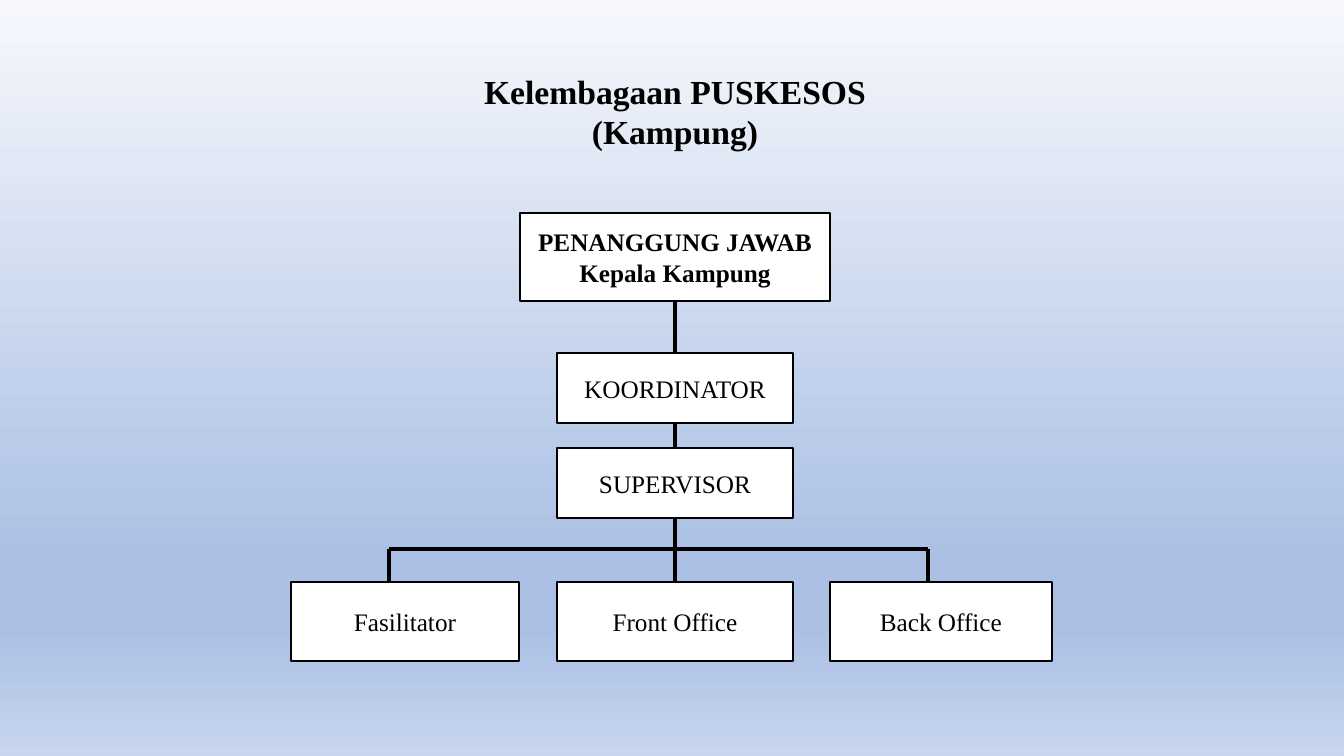
from lxml.etree import SubElement
from pptx import Presentation
from pptx.dml.color import RGBColor
from pptx.enum.shapes import MSO_CONNECTOR as LINE, MSO_SHAPE as SHAPE
from pptx.enum.text import MSO_ANCHOR as ANCHOR, PP_ALIGN as ALIGN
from pptx.oxml.ns import qn
from pptx.util import Pt

PX = 914400 / 100.8
FONT = "Times New Roman"
BLACK = RGBColor(0x00, 0x00, 0x00)
WHITE = RGBColor(0xFF, 0xFF, 0xFF)
SKY = [
    (0, RGBColor(0xF6, 0xF8, 0xFC)),
    (74, RGBColor(0xAB, 0xC0, 0xE4)),
    (83, RGBColor(0xAB, 0xC0, 0xE4)),
    (100, RGBColor(0xC7, 0xD5, 0xED)),
]

TITLE = "Kelembagaan PUSKESOS\n(Kampung)"
TITLE_BOX = (422, 71, 506, 80)

# name: (text, (left, top, width, height), bold)
BOXES = {
    "head": ("PENANGGUNG JAWAB\nKepala Kampung", (520, 213, 310, 88), True),
    "coordinator": ("KOORDINATOR", (557, 353, 236, 70), False),
    "supervisor": ("SUPERVISOR", (557, 448, 236, 70), False),
    "facilitator": ("Fasilitator", (291, 582, 228, 79), False),
    "front": ("Front Office", (557, 582, 236, 79), False),
    "back": ("Back Office", (830, 582, 222, 79), False),
}
CHAIN = ["head", "coordinator", "supervisor", "front"]
BUS_Y, DROP_Y = 549, 582
BUS_ENDS = (389, 928)


def px(n):
    return round(n * PX)


def write(shape, text, size, bold):
    tf = shape.text_frame
    tf.text = text
    tf.word_wrap = True
    tf.vertical_anchor = ANCHOR.MIDDLE
    for p in tf.paragraphs:
        p.alignment = ALIGN.CENTER
        p.line_spacing = 1.0
        p.space_before = Pt(0)
        for r in p.runs:
            r.font.name = FONT
            r.font.size = Pt(size)
            r.font.bold = bold
            r.font.color.rgb = BLACK


def add_box(s, text, box, bold):
    sp = s.shapes.add_shape(SHAPE.RECTANGLE, *map(px, box))
    sp.shadow.inherit = False
    sp.fill.solid()
    sp.fill.fore_color.rgb = WHITE
    sp.line.color.rgb = BLACK
    sp.line.width = Pt(1)
    write(sp, text, 18, bold)
    return sp


def add_line(s, x1, y1, x2, y2):
    c = s.shapes.add_connector(LINE.STRAIGHT, *map(px, (x1, y1, x2, y2)))
    c.line.color.rgb = BLACK
    c.line.width = Pt(2.25)
    SubElement(c.element.spPr, qn("a:effectLst"))
    return c


def paint_background(s):
    fill = s.background.fill
    fill.gradient()
    fill.gradient_angle = 270
    stops = s.element.find(".//" + qn("a:gsLst"))
    for old in list(stops):
        stops.remove(old)
    for percent, color in SKY:
        gs = SubElement(stops, qn("a:gs"), pos=str(percent * 1000))
        SubElement(gs, qn("a:srgbClr"), val=str(color))


def main():
    prs = Presentation()
    prs.slide_width, prs.slide_height = px(1344), px(756)
    s = prs.slides.add_slide(prs.slide_layouts[5])
    paint_background(s)

    title = s.shapes.title
    title.left, title.top, title.width, title.height = map(px, TITLE_BOX)
    write(title, TITLE, 24, True)
    tf = title.text_frame
    tf.margin_top = tf.margin_bottom = 0

    boxes = {name: add_box(s, *spec) for name, spec in BOXES.items()}

    for upper, lower in zip(CHAIN, CHAIN[1:]):
        c = add_line(s, 0, 0, 0, 0)
        c.begin_connect(boxes[upper], 2)
        c.end_connect(boxes[lower], 0)

    left, right = BUS_ENDS
    add_line(s, left, BUS_Y, right, BUS_Y)
    for x in BUS_ENDS:
        add_line(s, x, BUS_Y, x, DROP_Y)

    prs.save("out.pptx")


if __name__ == "__main__":
    main()
